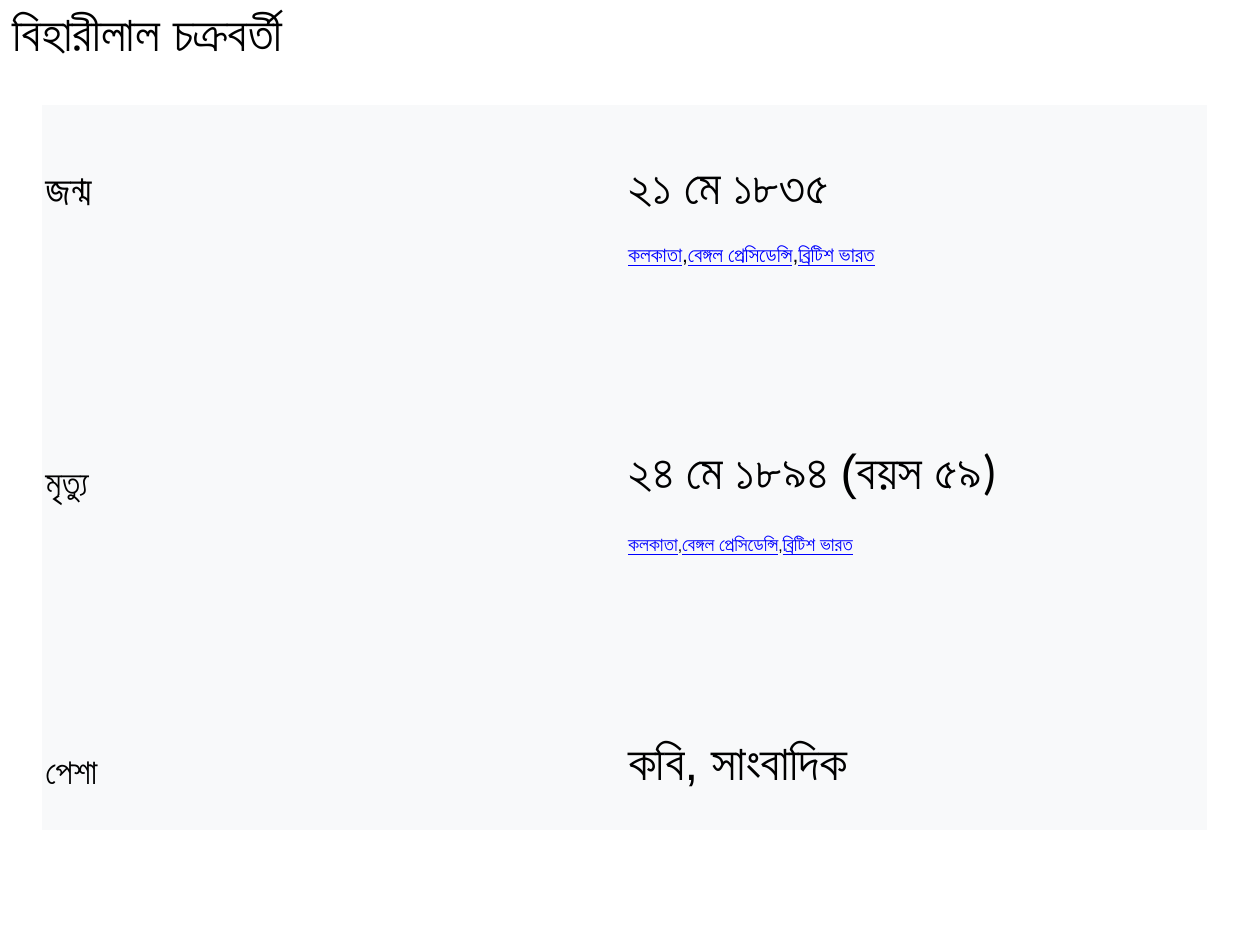
from pptx import Presentation
from pptx.dml.color import RGBColor
from pptx.enum.text import MSO_ANCHOR, MSO_AUTO_SIZE, PP_ALIGN
from pptx.oxml.ns import qn
from pptx.util import Inches, Pt

BLACK = RGBColor(0x00, 0x00, 0x00)
LINK_BLUE = RGBColor(0x00, 0x00, 0xFF)
PANEL = RGBColor(0xF8, 0xF9, 0xFA)
NO_GRID_STYLE = "{2D5ABB26-0587-4C30-8999-92F81FD0307C}"

ROW_HEIGHTS = (0.59, 2.29, 2.29, 0.59)
PARAGRAPH_FORMAT = {
    "alignment": PP_ALIGN.JUSTIFY,
    "line_spacing": Pt(18),
    "space_before": Pt(6),
    "space_after": Pt(6),
}
CELL_FORMAT = {
    f"margin_{side}": Inches(0.03) for side in ("left", "right", "top", "bottom")
}
BIRTH_PLACES = ("কলকাতা", "বেঙ্গল প্রেসিডেন্সি", "ব্রিটিশ ভারত")


def set_attributes(target, values):
    for name, value in values.items():
        setattr(target, name, value)


def text_run(text, size, font="Calibri", color=BLACK, bold=False, underline=False):
    """Describe one run as its text and its font values."""
    return text, color, {
        "size": Pt(size), "name": font, "bold": bold, "underline": underline,
    }


def place_runs(link_size, comma_size):
    """Underlined place names with plain commas between them."""
    runs = []
    for place in BIRTH_PLACES:
        if runs:
            runs.append(text_run(",", comma_size, "Arial"))
        runs.append(text_run(place, link_size, "Arial", LINK_BLUE, underline=True))
    return runs


def add_runs(paragraph, runs):
    for text, color, font_format in runs:
        run = paragraph.add_run()
        run.text = text
        set_attributes(run.font, font_format)
        run.font.color.rgb = color


def fill_cell(cell, paragraphs):
    set_attributes(cell, CELL_FORMAT)
    for index, runs in enumerate(paragraphs):
        frame = cell.text_frame
        paragraph = frame.add_paragraph() if index else frame.paragraphs[0]
        set_attributes(paragraph, PARAGRAPH_FORMAT)
        add_runs(paragraph, runs)


def add_title(slide, text):
    title = slide.shapes.title
    set_attributes(title, {
        "left": Inches(0), "top": Inches(0),
        "width": Inches(10), "height": Inches(0.5),
    })
    set_attributes(title.text_frame, {
        "word_wrap": False,
        "auto_size": MSO_AUTO_SIZE.SHAPE_TO_FIT_TEXT,
        "vertical_anchor": MSO_ANCHOR.MIDDLE,
    })
    paragraph = title.text_frame.paragraphs[0]
    paragraph.alignment = PP_ALIGN.JUSTIFY
    add_runs(paragraph, [text_run(text, 28, "Arial", bold=True)])


def add_facts_table(slide, facts):
    shape = slide.shapes.add_table(
        len(ROW_HEIGHTS), 2,
        Inches(0.33), Inches(0.83), Inches(9.25), Inches(sum(ROW_HEIGHTS)),
    )
    table = shape.table
    set_attributes(table, {"first_row": False, "horz_banding": False})
    for style in shape.element.iter(qn("a:tableStyleId")):
        style.text = NO_GRID_STYLE
    for row, height in zip(table.rows, ROW_HEIGHTS):
        row.height = Inches(height)
    for cell in table.iter_cells():
        cell.fill.solid()
        cell.fill.fore_color.rgb = PANEL

    # Empty heading row across both columns
    table.cell(0, 0).merge(table.cell(0, 1))

    # Label on the left, details on the right
    for row_index, (label, details) in enumerate(facts, start=1):
        fill_cell(table.cell(row_index, 0), [[label]])
        fill_cell(table.cell(row_index, 1), details)


def main():
    presentation = Presentation()
    presentation.slide_width = Inches(10)
    presentation.slide_height = Inches(7.5)
    slide = presentation.slides.add_slide(presentation.slide_layouts[5])

    add_title(slide, "বিহারীলাল চক্রবর্তী")
    add_facts_table(slide, [
        (text_run("জন্ম", 24, bold=True),
         [[text_run("২১ মে ১৮৩৫", 28)], place_runs(12, 12)]),
        (text_run("মৃত্যু", 20, bold=True),
         [[text_run("২৪ মে ১৮৯৪ ", 28),
           text_run("(বয়স ", 28, "Arial"),
           text_run("৫৯)", 28)],
          place_runs(11, 9)]),
        (text_run("পেশা", 20, bold=True),
         [[text_run("কবি", 28), text_run(", সাংবাদিক", 28, "Arial")]]),
    ])

    presentation.save("out.pptx")


if __name__ == "__main__":
    main()
